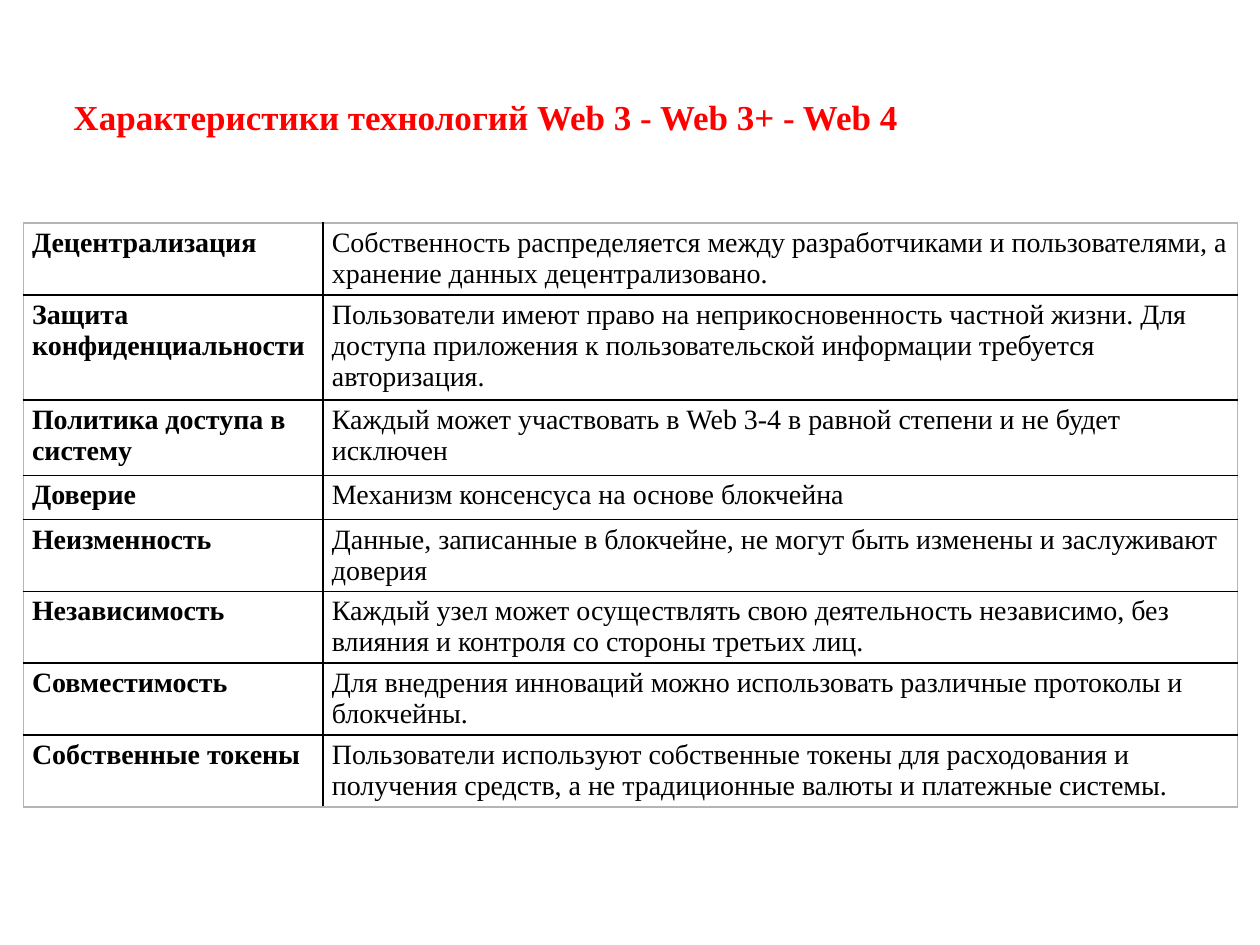
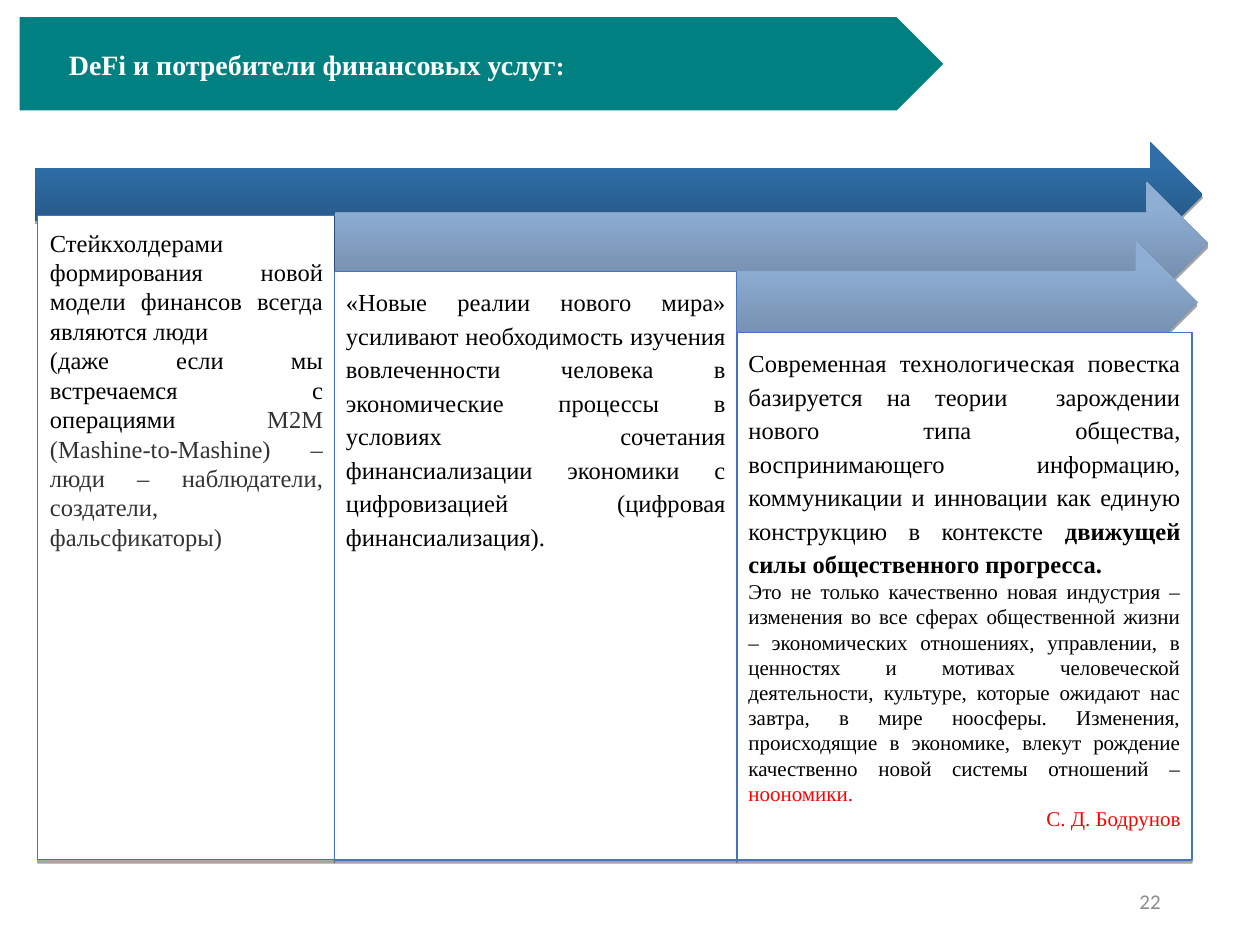
from lxml import etree
from pptx import Presentation
from pptx.dml.color import RGBColor
from pptx.enum import shapes, text
from pptx.oxml.ns import qn
from pptx.util import Inches, Pt

# Shared look: a grid of 100 columns by 75 rows
COLS, ROWS = 100, 75
CELL = Inches(0.1)
SERIF, SANS = "Times New Roman", "Calibri"
BLACK, WHITE, RED, TEAL = "000000", "FFFFFF", "FF0000", "008080"
GRAPHITE, GREY, FRAME, EDGE = "333333", "8C8C8C", "B5B5B5", "4472C4"
NAVY, STEEL = ("23527D", "2F6EA7"), ("6C84A0", "8EAED4")
LEFT, RIGHT, JUSTIFY = (text.PP_ALIGN.LEFT, text.PP_ALIGN.RIGHT,
                        text.PP_ALIGN.JUSTIFY)
TOP, MIDDLE = text.MSO_ANCHOR.TOP, text.MSO_ANCHOR.MIDDLE

TRAITS = [
    (5.7, "Децентрализация", "Собственность распределяется между разработчиками и "
     "пользователями, а хранение данных децентрализовано."),
    (7.8, "Защита конфиденциальности", "Пользователи имеют право на "
     "неприкосновенность частной жизни. Для доступа приложения к "
     "пользовательской информации требуется авторизация."),
    (6, "Политика доступа в систему", "Каждый может участвовать в Web 3-4 в "
     "равной степени и не будет исключен"),
    (3.5, "Доверие", "Механизм консенсуса на основе блокчейна"),
    (5.7, "Неизменность", "Данные, записанные в блокчейне, не могут быть изменены "
     "и заслуживают доверия"),
    (5.7, "Независимость", "Каждый узел может осуществлять свою деятельность "
     "независимо, без влияния и контроля со стороны третьих лиц."),
    (5.7, "Совместимость", "Для внедрения инноваций можно использовать различные "
     "протоколы и блокчейны."),
    (5.7, "Собственные токены", "Пользователи используют собственные токены для "
     "расходования и получения средств, а не традиционные валюты и платежные "
     "системы."),
]

# Each paragraph: alignment, line spacing, size, runs of (words, colour, bold)
STAKEHOLDERS = [
    (JUSTIFY, 1, 14, [("Стейкхолдерами формирования новой модели финансов всегда "
                       "являются люди", BLACK, False)]),
    (JUSTIFY, 1, 14, [
        ("(даже если мы встречаемся с операциями ", BLACK, False),
        ("М2М (Mashine-to-Mashine) – люди – наблюдатели, создатели, "
         "фальсфикаторы)", GRAPHITE, False)]),
]
NEW_REALITY = [
    (JUSTIFY, 1.14, 14, [
        ("«Новые реалии нового мира» усиливают необходимость изучения "
         "вовлеченности человека в экономические процессы в условиях сочетания "
         "финансиализации экономики с цифровизацией (цифровая "
         "финансиализация).", BLACK, False)]),
]
NEW_SOCIETY = [
    (JUSTIFY, 1.14, 14, [
        ("Современная технологическая повестка базируется на теории  зарождении "
         "нового типа общества, воспринимающего информацию, коммуникации и "
         "инновации как единую конструкцию в контексте ", BLACK, False),
        ("движущей силы общественного прогресса.", BLACK, True)]),
    (JUSTIFY, 1, 12, [
        ("Это не только качественно новая индустрия – изменения во все сферах "
         "общественной жизни – экономических отношениях, управлении, в ценностях "
         "и мотивах человеческой деятельности, культуре, которые ожидают нас "
         "завтра, в мире ноосферы. Изменения, происходящие в экономике, влекут "
         "рождение качественно новой системы отношений – ", BLACK, False),
        ("ноономики.", RED, False)]),
    (RIGHT, 1, 12, [("С. Д. Бодрунов", RED, False)]),
]


def rgb(code):
    return RGBColor.from_string(code)


def grid(*lengths):
    return [round(length * CELL) for length in lengths]


def style(font, size, color, bold=False, face=SERIF):
    font.size, font.bold, font.name = Pt(size), bold, face
    font.color.rgb = rgb(color)


def write(frame, paragraphs, margins, anchor=TOP, face=SERIF):
    """Fill a text frame; margins are left, top, right, bottom in grid cells."""
    frame.word_wrap, frame.vertical_anchor = True, anchor
    (frame.margin_left, frame.margin_top,
     frame.margin_right, frame.margin_bottom) = grid(*margins)
    for index, (align, spacing, size, runs) in enumerate(paragraphs):
        paragraph = frame.add_paragraph() if index else frame.paragraphs[0]
        paragraph.alignment, paragraph.line_spacing = align, spacing
        for words, color, bold in runs:
            run = paragraph.add_run()
            run.text = words
            style(run.font, size, color, bold, face)


def add_block(slide, kind, box, fill=None, line=None):
    block = slide.shapes.add_shape(kind, *grid(*box))
    block.shadow.inherit = False
    if fill:
        block.fill.solid()
        block.fill.fore_color.rgb = rgb(fill)
    if line:
        block.line.color.rgb, block.line.width = rgb(line), Pt(0.75)
    else:
        block.line.fill.background()
    return block


def drop_shadow(block):
    effects = block.element.spPr.find(qn("a:effectLst"))
    shadow = etree.SubElement(effects, qn("a:outerShdw"), blurRad="0",
                              dist=str(Pt(1.8)), dir="5400000", rotWithShape="0")
    color = etree.SubElement(shadow, qn("a:srgbClr"), val=BLACK)
    etree.SubElement(color, qn("a:alpha"), val="35000")


def add_caption(slide, box, paragraphs, margins, anchor=MIDDLE, face=SERIF):
    caption = slide.shapes.add_textbox(*grid(*box))
    write(caption.text_frame, paragraphs, margins, anchor, face)


# Table of traits
def border(cell, side, color):
    line = etree.SubElement(cell._tc.get_or_add_tcPr(), qn(f"a:ln{side}"),
                            w=str(Pt(1)))
    fill = etree.SubElement(line, qn("a:solidFill"))
    etree.SubElement(fill, qn("a:srgbClr"), val=color)


def add_traits(slide, box):
    count = len(TRAITS)
    table = slide.shapes.add_table(count, 2, *grid(*box)).table
    table.first_row = table.horz_banding = False
    name_share = 0.247
    table.columns[0].width, table.columns[1].width = grid(
        box[2] * name_share, box[2] * (1 - name_share))
    for row, (height, *words) in enumerate(TRAITS):
        table.rows[row].height = grid(height)[0]
        for column, wording in enumerate(words):
            cell = table.cell(row, column)
            cell.text = wording
            cell.margin_left, cell.margin_right = grid(0.7, 0.7)
            cell.margin_top, cell.margin_bottom = grid(0.35, 0)
            style(cell.text_frame.paragraphs[0].runs[0].font, 16, BLACK,
                  bold=column == 0)
            outer = {"L": column == 0, "R": column == 1,
                     "T": row == 0, "B": row == count - 1}
            for side, at_rim in outer.items():
                border(cell, side, FRAME if at_rim else BLACK)
            cell.fill.background()


# Heading pointer
def add_banner(slide, box):
    banner = add_block(slide, shapes.MSO_SHAPE.PENTAGON, box, TEAL)
    heading = [(LEFT, 1, 16, [("DeFi и потребители финансовых услуг", WHITE, True),
                              (":", WHITE, True)])]
    write(banner.text_frame, heading, (3.9, 0.5, 1, 0.5), MIDDLE)
    colon = banner.text_frame.paragraphs[0].runs[-1]
    colon.font.size = Pt(15)


# One step: an arrow running to the right with a text panel hanging from it
def add_step(slide, box, lead, arrow_size, panel_drop, inset, shades, paragraphs):
    left, top, width, height = box
    arrow = add_block(slide, shapes.MSO_SHAPE.RIGHT_ARROW,
                      (left - lead, top, *arrow_size))
    arrow.fill.gradient()
    arrow.fill.gradient_angle = 90
    for stop, shade, position in zip(arrow.fill.gradient_stops, shades, (0, 0.8)):
        stop.color.rgb, stop.position = rgb(shade), position
    drop_shadow(arrow)
    panel = add_block(slide, shapes.MSO_SHAPE.RECTANGLE,
                      (left, top + panel_drop, width, height - panel_drop),
                      WHITE, EDGE)
    drop_shadow(panel)
    write(panel.text_frame, paragraphs, (inset, inset, 0.9, 0.9))


def build_traits_slide(slide):
    title = [(LEFT, 0.9, 20, [("Характеристики технологий Web 3 - Web 3+ - Web 4",
                               RED, True)])]
    add_caption(slide, (4.85, 7.4, 88.3, 8.7), title, (1, 0.56, 1, 0.5), TOP)
    add_traits(slide, (1.85, 17.7, 96.35, 45.8))


def build_steps_slide(slide):
    number = [(RIGHT, 1, 12, [("22", GREY, False)])]
    add_caption(slide, (70.6, 69.5, 22.5, 4), number, (1, 0.5, 1, 0.5), face=SANS)
    # Left edge, arrow top, arrow lead and size, panel drop, inset, shades, text
    steps = [
        (3, 11.3, 0.2, (92.65, 8.3), 5.8, 0.97, NAVY, STAKEHOLDERS),
        (26.55, 14.45, 0, (69.35, 9.8), 7.1, 0.9, STEEL, NEW_REALITY),
        (58.5, 19.1, 0, (36.55, 9.8), 7.3, 0.9, STEEL, NEW_SOCIETY),
    ]
    rights = [step[0] for step in steps[1:]] + [94.6]
    bottom = 68.25
    for (left, top, *details), right in zip(steps, rights):
        add_step(slide, (left, top, right - left, bottom - top), *details)
    add_banner(slide, (1.57, 1.37, 73.3, 7.4))


def main():
    deck = Presentation()
    deck.slide_width, deck.slide_height = grid(COLS, ROWS)
    for build in (build_traits_slide, build_steps_slide):
        build(deck.slides.add_slide(deck.slide_layouts[6]))
    deck.save("out.pptx")


if __name__ == "__main__":
    main()
